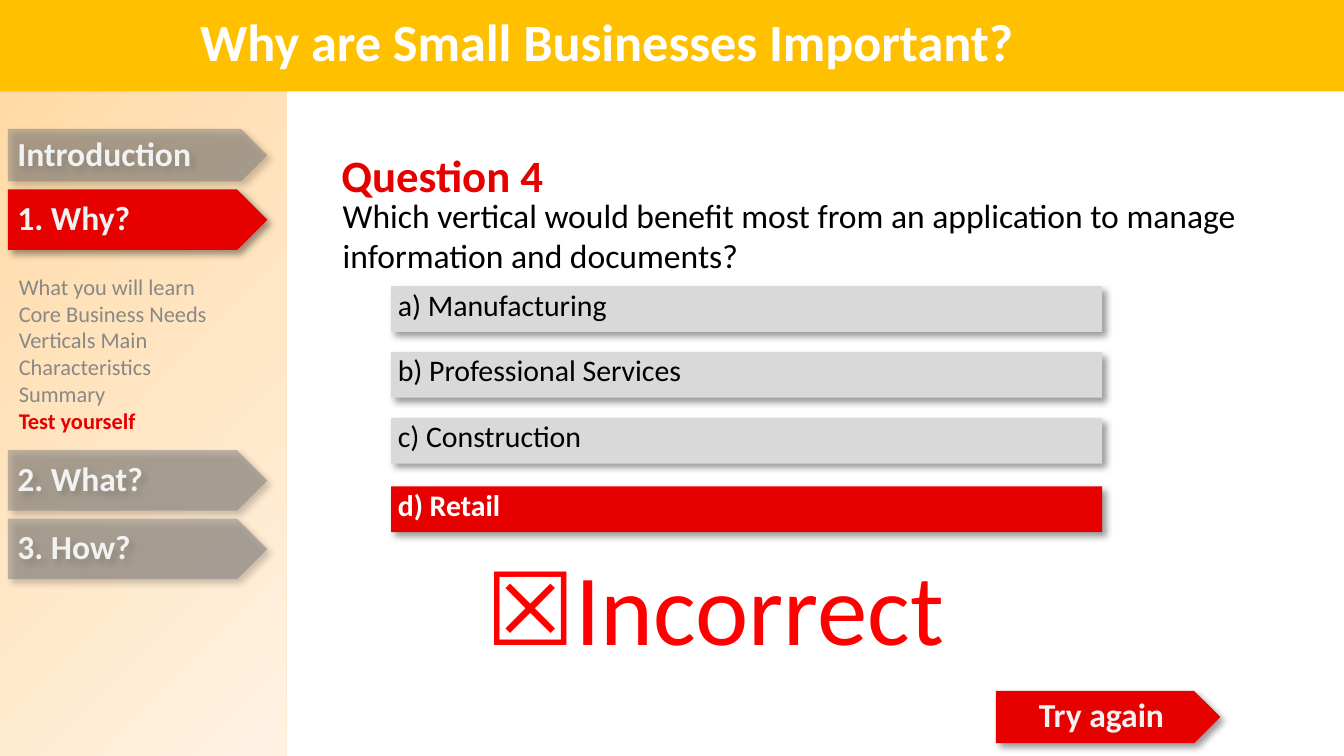
"""Build the quiz feedback slide for question 4 of the small business course."""
from lxml import etree
from pptx import Presentation
from pptx import util as u
from pptx.dml.color import RGBColor
from pptx.enum import shapes, text
from pptx.oxml.ns import qn

RED = RGBColor(0xE6, 0x00, 0x00)
VERDICT_RED = RGBColor(0xFF, 0x00, 0x00)
AMBER = RGBColor(0xFF, 0xC0, 0x00)
PEACH = RGBColor(0xFF, 0xD8, 0xA0)
CREAM = RGBColor(0xFF, 0xF2, 0xE3)
GREY = RGBColor(0x80, 0x80, 0x80)
MENU_GREY = RGBColor(0x88, 0x88, 0x88)
PALE_GREY = RGBColor(0xD9, 0xD9, 0xD9)
OFF_WHITE = RGBColor(0xF2, 0xF2, 0xF2)
WHITE = RGBColor(0xFF, 0xFF, 0xFF)
BLACK = RGBColor(0, 0, 0)


def write(holder, words, size, color, bold=False, anchor=text.MSO_ANCHOR.TOP,
          align=text.PP_ALIGN.LEFT, inset=0):
    frame = holder.text_frame
    frame.text = words
    frame.word_wrap = True
    frame.auto_size = text.MSO_AUTO_SIZE.NONE
    frame.vertical_anchor = anchor
    frame.margin_left = u.Inches(inset)
    frame.margin_right = frame.margin_top = frame.margin_bottom = 0
    for paragraph in frame.paragraphs:
        paragraph.alignment = align
        paragraph.space_before = u.Pt(0)
        for run in paragraph.runs:
            run.font.name = "Calibri"
            run.font.size = u.Pt(size)
            run.font.bold = bold
            run.font.color.rgb = color
    return frame


def add_block(kind, left, top, width, height, color, raised=True):
    block = slide.shapes.add_shape(
        kind, u.Inches(left), u.Inches(top), u.Inches(width), u.Inches(height))
    block.fill.solid()
    block.fill.fore_color.rgb = color
    block.line.fill.background()
    block.shadow.inherit = False
    if raised:
        effects = block._element.spPr.find(qn("a:effectLst"))
        shadow = etree.SubElement(effects, qn("a:outerShdw"), blurRad=str(u.Pt(4)),
                                  dist=str(u.Pt(3)), dir="2700000", algn="tl",
                                  rotWithShape="0")
        tint = etree.SubElement(shadow, qn("a:srgbClr"), val="000000")
        etree.SubElement(tint, qn("a:alpha"), val="40000")
    return block


deck = Presentation()
deck.slide_width = u.Inches(10)
deck.slide_height = u.Inches(10) * 9 // 16
slide = deck.slides.add_slide(deck.slide_layouts[1])
RECT = shapes.MSO_SHAPE.RECTANGLE
ARROW = shapes.MSO_SHAPE.PENTAGON
MIDDLE = text.MSO_ANCHOR.MIDDLE

heading, question = slide.placeholders
heading.left, heading.top = u.Inches(2.54), u.Inches(1.1)
heading.width, heading.height = u.Inches(6.9), u.Inches(0.96)
write(heading, "Question 4", 24, RED, bold=True)

question.left, question.top = u.Inches(2.55), u.Inches(1.45)
question.width, question.height = u.Inches(6.87), u.Inches(3.91)
question_frame = write(
    question, "Which vertical would benefit most from an application to manage "
    "information and documents?", 18, BLACK)
question_props = question_frame.paragraphs[0]._p.get_or_add_pPr()
question_props.set("marL", "0")
question_props.set("indent", "0")
etree.SubElement(question_props, qn("a:buNone"))

answers = [("a) Manufacturing", 2.13), ("b) Professional Services", 2.62),
           ("c) Construction", 3.11), ("d) Retail", 3.62)]
for answer, top in answers:
    chosen = answer == "d) Retail"
    option = add_block(RECT, 2.91, top, 5.29, 0.34, RED if chosen else PALE_GREY)
    write(option, answer, 16, WHITE if chosen else BLACK, bold=chosen, inset=0.05)

retry = add_block(ARROW, 7.41, 5.14, 1.67, 0.39, RED)
retry_frame = write(retry, "Try again", 18, OFF_WHITE, bold=True, anchor=MIDDLE,
                    align=text.PP_ALIGN.CENTER)
retry_frame.paragraphs[0].line_spacing = 0.9

verdict = slide.shapes.add_textbox(
    u.Inches(3.61), u.Inches(4.05), u.Inches(3.43), u.Inches(1))
write(verdict, "☒Incorrect", 54, VERDICT_RED).word_wrap = False

sidebar = add_block(RECT, 0, 0, 2.13, 5.63, PEACH, raised=False)
sidebar.fill.gradient()
sidebar.fill.gradient_angle = 315
for stop, color in zip(sidebar.fill.gradient_stops, (PEACH, CREAM)):
    stop.color.rgb = color

chapters = [("Introduction", 0.96, 0.39), ("1. Why?", 1.41, 0.45),
            ("2. What?", 3.35, 0.45), ("3. How?", 3.86, 0.45)]
for chapter, top, height in chapters:
    current = chapter == "1. Why?"
    tab = add_block(ARROW, 0.06, top, 1.93, height, RED if current else GREY)
    if not current:
        tab_color = tab._element.spPr.find(qn("a:solidFill"))[0]
        etree.SubElement(tab_color, qn("a:alpha"), val="50000")
    tab_frame = write(tab, chapter, 18, OFF_WHITE, bold=True, anchor=MIDDLE, inset=0.07)
    tab_frame.paragraphs[0].line_spacing = 0.9

topics = ["What you will learn", "Core Business Needs",
          "Verticals Main Characteristics", "Summary", "Test yourself"]
menu = slide.shapes.add_textbox(
    u.Inches(0.14), u.Inches(2.03), u.Inches(1.96), u.Inches(3.59))
menu_frame = write(menu, "\n".join(topics), 12, MENU_GREY)
current_topic = menu_frame.paragraphs[-1].runs[0].font
current_topic.bold = True
current_topic.color.rgb = RED

add_block(RECT, 0, 0, 10, 0.68, AMBER, raised=False)
course_title = slide.shapes.add_textbox(
    u.Inches(1.49), u.Inches(-0.03), u.Inches(7.14), u.Inches(0.67))
write(course_title, "Why are Small Businesses Important?", 28, WHITE, bold=True,
      anchor=MIDDLE)

deck.save("out.pptx")
